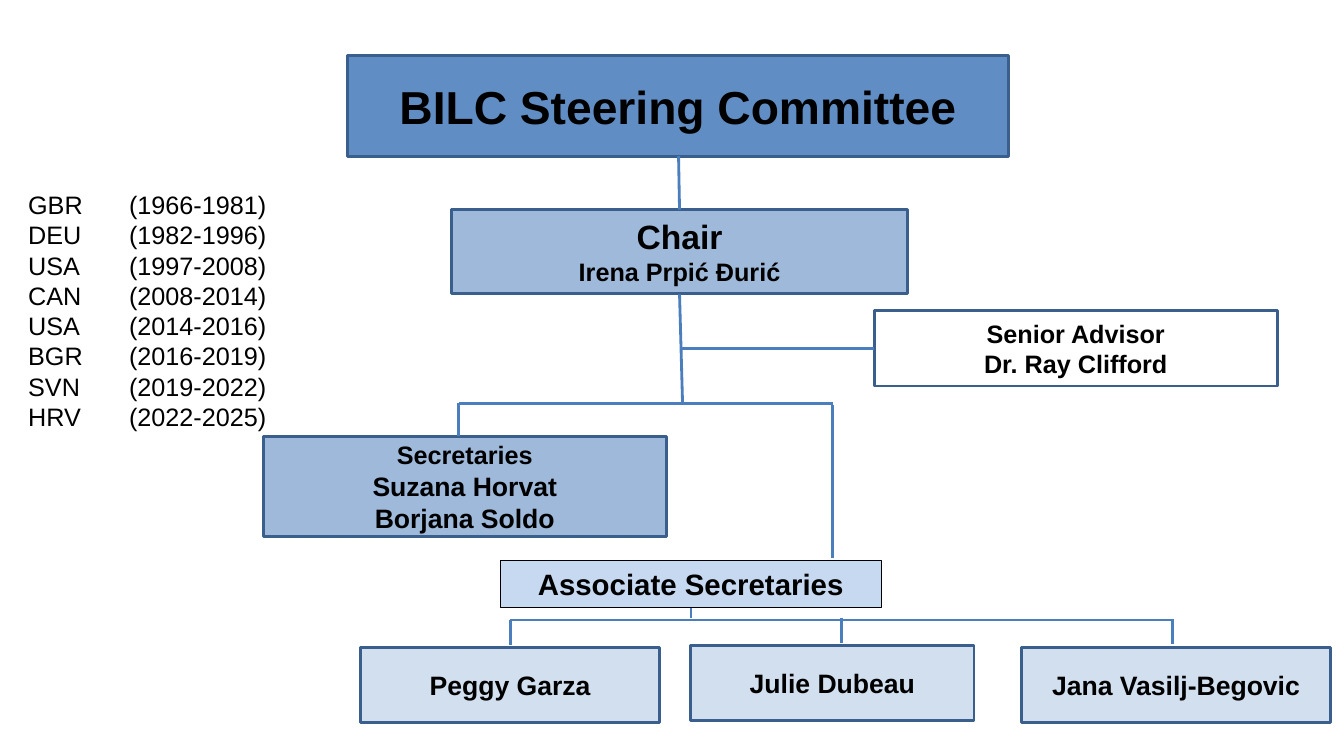
from lxml import etree
from pptx import Presentation
from pptx.dml.color import RGBColor
from pptx.enum import shapes, text
from pptx.oxml import ns
from pptx.util import Inches, Pt

COLORS = {
    "blue": "4F81BD",
    "pale": "C6D9F1",
    "border": "3A5F8C",
    "connector": "4B7EBC",
    "ink": "000000",
}


def write_lines(shape, lines, bold=True, align=text.PP_ALIGN.CENTER, anchor=text.MSO_ANCHOR.MIDDLE):
    frame = shape.text_frame
    frame.word_wrap = True
    frame.auto_size = text.MSO_AUTO_SIZE.NONE
    frame.vertical_anchor = anchor
    frame.margin_left = frame.margin_right = Inches(0.12)
    frame.margin_top = frame.margin_bottom = Inches(0.06)
    for index, (words, size) in enumerate(lines):
        paragraph = frame.add_paragraph() if index else frame.paragraphs[0]
        paragraph.alignment = align
        run = paragraph.add_run()
        run.text = words
        run.font.name = "Arial"
        run.font.size = Pt(size)
        run.font.bold = bold
        run.font.color.rgb = RGBColor.from_string(COLORS["ink"])


def style_box(shape, fill, opacity, border, width):
    if fill:
        shape.fill.solid()
        shape.fill.fore_color.rgb = RGBColor.from_string(COLORS[fill])
        if opacity < 100:
            color = shape._element.spPr.find(".//" + ns.qn("a:srgbClr"))
            etree.SubElement(color, ns.qn("a:alpha"), val=str(opacity * 1000))
    else:
        shape.fill.background()
    shape.line.color.rgb = RGBColor.from_string(COLORS[border])
    shape.line.width = Pt(width)


presentation = Presentation()
presentation.slide_width = Inches(13.33)
presentation.slide_height = Inches(7.5)
slide = presentation.slides.add_slide(presentation.slide_layouts[5])

title = slide.shapes.title
title.left, title.top = Inches(3.45), Inches(0.55)
title.width, title.height = Inches(6.55), Inches(1)
style_box(title, "blue", 90, "border", 2)
write_lines(title, [("BILC Steering Committee", 33)])

process = shapes.MSO_SHAPE.FLOWCHART_PROCESS
rectangle = shapes.MSO_SHAPE.RECTANGLE
boxes = [
    (process, (4.48, 2.08, 4.52, 0.83), ("blue", 55, "border", 2),
     [("Chair", 24), ("Irena Prpić Đurić", 18)]),
    (process, (8.67, 3.08, 4, 0.75), (None, 100, "border", 2),
     [("Senior Advisor", 18), ("Dr. Ray Clifford", 18)]),
    (process, (2.61, 4.33, 4, 0.99), ("blue", 55, "border", 2),
     [("Secretaries", 18), ("Suzana Horvat", 19), ("Borjana Soldo", 19)]),
    (rectangle, (4.96, 5.56, 3.78, 0.47), ("pale", 100, "ink", 0.75),
     [("Associate Secretaries", 21)]),
]
associates = [
    ("Peggy Garza", 3.58, 6.42, 2.96),
    ("Julie Dubeau", 6.85, 6.4, 2.81),
    ("Jana Vasilj-Begovic", 10.13, 6.42, 3.07),
]
for name, left, top, width in associates:
    boxes.append((process, (left, top, width, 0.75), ("blue", 25, "border", 2), [(name, 19)]))

for kind, place, style, lines in boxes:
    box = slide.shapes.add_shape(kind, *[Inches(length) for length in place])
    box.shadow.inherit = False
    style_box(box, *style)
    write_lines(box, lines)

terms = [
    ("GBR", "1966-1981"),
    ("DEU", "1982-1996"),
    ("USA", "1997-2008"),
    ("CAN", "2008-2014"),
    ("USA", "2014-2016"),
    ("BGR", "2016-2019"),
    ("SVN", "2019-2022"),
    ("HRV", "2022-2025"),
]
history = slide.shapes.add_textbox(Inches(0.16), Inches(1.82), Inches(4.4), Inches(2.52))
write_lines(history, [(f"{country}\t({years})", 18) for country, years in terms],
            bold=False, align=text.PP_ALIGN.LEFT, anchor=text.MSO_ANCHOR.TOP)

links = [
    (6.73, 1.55, 6.74, 2.08, 2),
    (8.67, 3.46, 6.74, 3.46, 2),
    (6.74, 2.92, 6.77, 4, 2),
    (4.55, 4, 8.26, 4, 2),
    (4.55, 4, 4.55, 4.33, 2),
    (8.26, 4.02, 8.26, 5.54, 2),
    (5.06, 6.15, 11.61, 6.15, 2),
    (5.06, 6.15, 5.06, 6.4, 2),
    (8.35, 6.13, 8.35, 6.38, 2),
    (11.63, 6.14, 11.63, 6.39, 2),
    (6.85, 6.03, 6.85, 6.13, 1.5),
]
for *ends, width in links:
    link = slide.shapes.add_connector(shapes.MSO_CONNECTOR.STRAIGHT, *[Inches(end) for end in ends])
    link.line.color.rgb = RGBColor.from_string(COLORS["connector"])
    link.line.width = Pt(width)
    etree.SubElement(link._element.spPr, ns.qn("a:effectLst"))

presentation.save("out.pptx")
